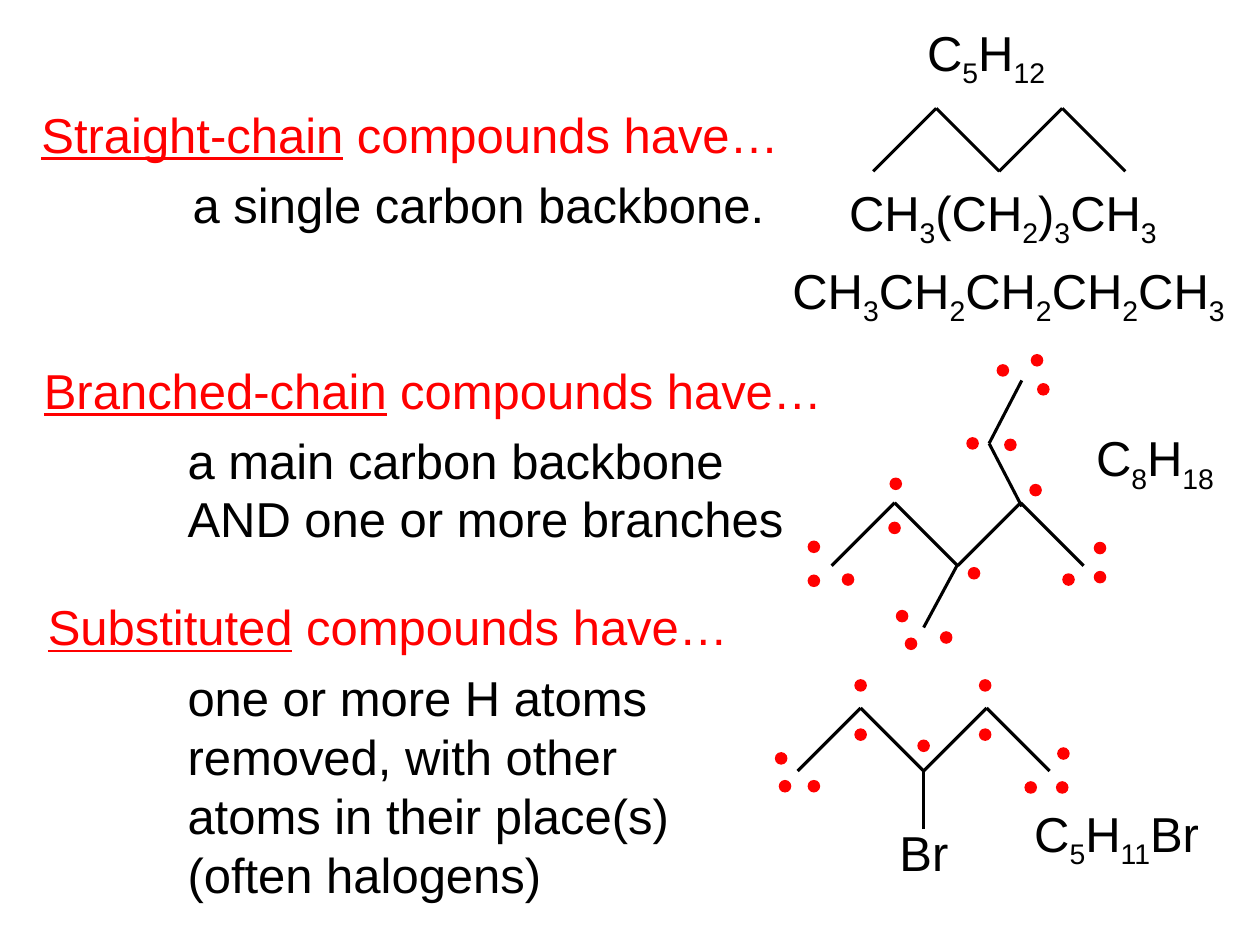
from itertools import pairwise

from lxml import etree
from pptx import Presentation
from pptx.dml.color import RGBColor
from pptx.enum.shapes import MSO_CONNECTOR, MSO_SHAPE
from pptx.enum.text import MSO_ANCHOR, MSO_AUTO_SIZE
from pptx.oxml.ns import qn
from pptx.util import Pt

STRAIGHT = MSO_CONNECTOR.STRAIGHT
OVAL = MSO_SHAPE.OVAL
MIDDLE = MSO_ANCHOR.MIDDLE
FIT_SHAPE = MSO_AUTO_SIZE.SHAPE_TO_FIT_TEXT

COLORS = {"term": "FF0000", "body": "000000", "bond": "000000", "hydrogen": "FF0000"}
FONT = "Arial"
TEXT_SIZE = 28
LINE_HEIGHT = 33.2
BOND_STEP = 36
DOT_SIZE = 7.2

SECTIONS = [
    ("Straight-chain", (16.6, 56.2, 445), ["a single carbon backbone."], (103, 96.5, 350)),
    ("Branched-chain", (18, 202.3, 468.7),
     ["a main carbon backbone", "AND one or more branches"], (100.1, 242.6, 363.6)),
    ("Substituted", (20.2, 337.7, 411.8),
     ["one or more H atoms", "removed, with other", "atoms in their place(s)",
      "(often halogens)"], (100.1, 378.7, 290.2)),
]
FORMULAS = [
    ("CH_3_(CH_2_)_3_CH_3", (478.1, 103, 197.3)),
    ("C_8_H_18", (619.2, 243.4, 87.1)),
    ("C_5_H_11_Br", (583.9, 457.9, 115.2)),
    ("C_5_H_12", (522.7, 11.5, 87.1)),
    ("CH_3_CH_2_CH_2_CH_2_CH_3", (445.7, 147.6, 270)),
]
CHAINS = [
    ((499, 61.9), []),
    ((475.2, 287.3), [((565.2, 253.4), (583.9, 217.4)),
                      ((565.2, 253.4), (583.9, 289.4)),
                      ((527.8, 358.6), (547.2, 322.6))]),
    ((455.8, 404.6), [((527.8, 473.8), (527.8, 439.2))]),
]
BRANCHED_HYDROGENS = [
    (589, 202.3), (592.6, 218.9), (569.5, 208.1), (588.2, 276.5), (625, 309.6),
    (625, 326.2), (607, 327.6), (553, 324), (508.3, 272.9), (507.6, 298.1),
    (461.5, 328.3), (461.5, 308.9), (481, 327.6), (511.9, 348.5), (537.1, 360.7),
    (517, 364.3), (552.2, 249.8), (573.8, 250.6),
]
SUBSTITUTED_HYDROGENS = [
    (524.2, 422.6), (559.4, 388.1), (559.4, 416.2), (488.2, 388.1), (488.2, 416.2),
    (445, 445.7), (442.8, 429.8), (461.5, 445.7), (585.4, 446.4), (603.4, 446.4),
    (604.1, 427),
]


def rgb(role):
    """Return the colour of a role."""
    return RGBColor.from_string(COLORS[role])


def add_run(paragraph, text, color="body", underline=False, subscript=False):
    """Append one formatted run to a paragraph."""
    run = paragraph.add_run()
    run.text = text
    run.font.name = FONT
    run.font.size = Pt(TEXT_SIZE)
    run.font.color.rgb = rgb(color)
    if underline:
        run.font.underline = True
    if subscript:
        run.font._element.set("baseline", "-25000")


def add_label(shapes, place, lines):
    """Add a text box whose lines are lists of (text, format) runs."""
    left, top, width = place
    height = LINE_HEIGHT * len(lines) + 7.2
    frame = shapes.add_textbox(Pt(left), Pt(top), Pt(width), Pt(height)).text_frame
    frame.word_wrap = False
    frame.auto_size = FIT_SHAPE
    frame.vertical_anchor = MIDDLE
    for index, line in enumerate(lines):
        paragraph = frame.add_paragraph() if index else frame.paragraphs[0]
        for text, style in line:
            add_run(paragraph, text, **style)


def add_section(shapes, term, heading_place, description, description_place):
    """Add an underlined term heading and its description."""
    add_label(shapes, heading_place, [[
        (term, {"color": "term", "underline": True}),
        (" compounds have…", {"color": "term"}),
    ]])
    add_label(shapes, description_place, [[(line, {})] for line in description])


def add_formula(shapes, formula, place):
    """Add a formula in which underscores enclose subscripts."""
    parts = enumerate(formula.split("_"))
    runs = [(part, {"subscript": index % 2 == 1}) for index, part in parts if part]
    add_label(shapes, place, [runs])


def add_bond(shapes, start, end):
    """Draw one bond between two points."""
    bond = shapes.add_connector(STRAIGHT, *(Pt(value) for value in start + end))
    bond.line.color.rgb = rgb("bond")
    bond.line.width = Pt(1.75)
    etree.SubElement(bond._element.spPr, qn("a:effectLst"))


def add_chain(shapes, origin, branches):
    """Draw a five-carbon zigzag with its branches and return the group."""
    left, top = origin
    carbons = [(left + BOND_STEP * i, top + BOND_STEP * ((i + 1) % 2)) for i in range(5)]
    group = shapes.add_group_shape()
    for start, end in [*pairwise(carbons), *branches]:
        add_bond(group.shapes, start, end)
    return group


def add_hydrogens(shapes, positions):
    """Draw a group of hydrogen dots."""
    group = shapes.add_group_shape()
    for left, top in positions:
        dot = group.shapes.add_shape(OVAL, Pt(left), Pt(top), Pt(DOT_SIZE), Pt(DOT_SIZE))
        dot.shadow.inherit = False
        dot.fill.solid()
        dot.fill.fore_color.rgb = rgb("hydrogen")
        dot.line.fill.background()


def main():
    """Build the slide on kinds of carbon compounds."""
    presentation = Presentation()
    presentation.slide_width, presentation.slide_height = Pt(720), Pt(540)
    slide = presentation.slides.add_slide(presentation.slide_layouts[6])
    shapes = slide.shapes
    for section in SECTIONS:
        add_section(shapes, *section)
    straight, branched, substituted = [add_chain(shapes, *chain) for chain in CHAINS]
    add_label(substituted.shapes, (506.9, 466.6, 42.5), [[("Br", {})]])
    for formula, place in FORMULAS:
        add_formula(shapes, formula, place)
    for positions in (BRANCHED_HYDROGENS, SUBSTITUTED_HYDROGENS):
        add_hydrogens(shapes, positions)
    presentation.save("out.pptx")


if __name__ == "__main__":
    main()
